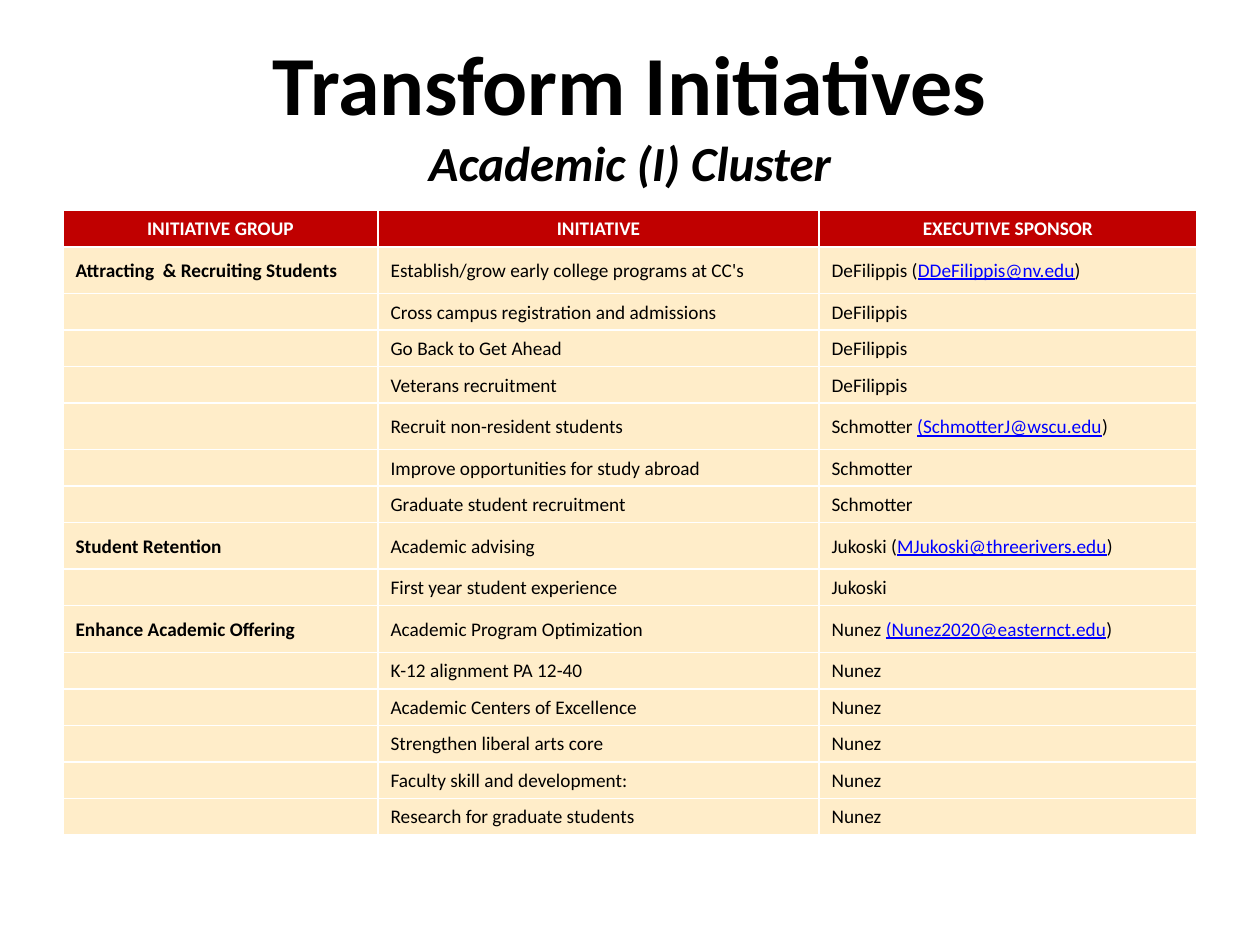
"""Build the Transform Initiatives slide for the Academic (I) Cluster."""
from lxml.etree import SubElement
from pptx import Presentation
from pptx.dml.color import RGBColor
from pptx.enum.text import MSO_ANCHOR as Anchor, PP_ALIGN as Align
from pptx.oxml.ns import qn
from pptx.util import Inches, Pt

COLORS = {"black": "000000", "white": "FFFFFF", "header": "C00000",
          "body": "FFEDC9", "link": "0000FF"}
HEADINGS = ["INITIATIVE GROUP", "INITIATIVE", "EXECUTIVE SPONSOR"]
COLUMN_WIDTHS = [2.5, 3.5, 3]
SHORT_ROW, TALL_ROW = 0.29, 0.37
INITIATIVES = [
    ("Attracting  & Recruiting Students", "Establish/grow early college programs at CC's",
     ("DeFilippis (", "DDeFilippis@nv.edu", ")")),
    ("", "Cross campus registration and admissions", ("DeFilippis",)),
    ("", "Go Back to Get Ahead", ("DeFilippis",)),
    ("", "Veterans recruitment", ("DeFilippis",)),
    ("", "Recruit non-resident students", ("Schmotter ", "(SchmotterJ@wscu.edu", ")")),
    ("", "Improve opportunities for study abroad", ("Schmotter",)),
    ("", "Graduate student recruitment", ("Schmotter",)),
    ("Student Retention", "Academic advising",
     ("Jukoski (", "MJukoski@threerivers.edu", ")")),
    ("", "First year student experience", ("Jukoski",)),
    ("Enhance Academic Offering", "Academic Program Optimization",
     ("Nunez ", "(Nunez2020@easternct.edu", ")")),
    ("", "K-12 alignment PA 12-40", ("Nunez",)),
    ("", "Academic Centers of Excellence", ("Nunez",)),
    ("", "Strengthen liberal arts core", ("Nunez",)),
    ("", "Faculty skill and development:", ("Nunez",)),
    ("", "Research for graduate students", ("Nunez",)),
]


def add_text(paragraph, text, size, color="black", **styles):
    run = paragraph.add_run()
    run.text = text
    run.font.color.rgb = RGBColor.from_string(COLORS[color])
    for name, value in {"name": "Calibri", "size": Pt(size), **styles}.items():
        setattr(run.font, name, value)


def format_cell(cell, fill, left_margin):
    cell.fill.solid()
    cell.fill.fore_color.rgb = RGBColor.from_string(COLORS[fill])
    layout = {"vertical_anchor": Anchor.MIDDLE, "margin_left": Inches(left_margin),
              "margin_right": Inches(0.01), "margin_top": Inches(0.01), "margin_bottom": 0}
    for name, value in layout.items():
        setattr(cell, name, value)
    return cell.text_frame.paragraphs[0]


deck = Presentation()
deck.slide_width, deck.slide_height = Inches(10), Inches(7.5)
slide = deck.slides.add_slide(deck.slide_layouts[6])

title = slide.shapes.add_textbox(0, Inches(0.25), Inches(10), Inches(1.28)).text_frame
for name in ("margin_left", "margin_top", "margin_right", "margin_bottom"):
    setattr(title, name, 0)
title.word_wrap = True
heading = title.paragraphs[0]
heading.alignment = Align.CENTER
add_text(heading, "Transform Initiatives", 48, bold=True)
heading.add_line_break()
add_text(heading, "Academic (I) Cluster", 28, bold=True, italic=True)

row_heights = [SHORT_ROW] + [TALL_ROW if len(sponsor) > 1 else SHORT_ROW
                             for _, _, sponsor in INITIATIVES]
table = slide.shapes.add_table(len(row_heights), len(HEADINGS), Inches(0.5), Inches(1.67),
                               Inches(sum(COLUMN_WIDTHS)), Inches(sum(row_heights))).table
table.horz_banding = False
for column, width in zip(table.columns, COLUMN_WIDTHS):
    column.width = Inches(width)
for row, height in zip(table.rows, row_heights):
    row.height = Inches(height)

for column, label in enumerate(HEADINGS):
    paragraph = format_cell(table.cell(0, column), "header", 0.01)
    paragraph.alignment = Align.CENTER
    add_text(paragraph, label, 11, "white", bold=True)

for row, (group, initiative, sponsor) in enumerate(INITIATIVES, 1):
    for column, parts in enumerate([(group,), (initiative,), sponsor]):
        paragraph = format_cell(table.cell(row, column), "body", 0.1)
        for position, part in enumerate(parts):
            is_link = position == 1
            if part:
                add_text(paragraph, part, 11, "link" if is_link else "black",
                         bold=column == 0, underline=is_link)
            else:
                SubElement(paragraph._p, qn("a:endParaRPr"), sz="1100")

deck.save("out.pptx")
